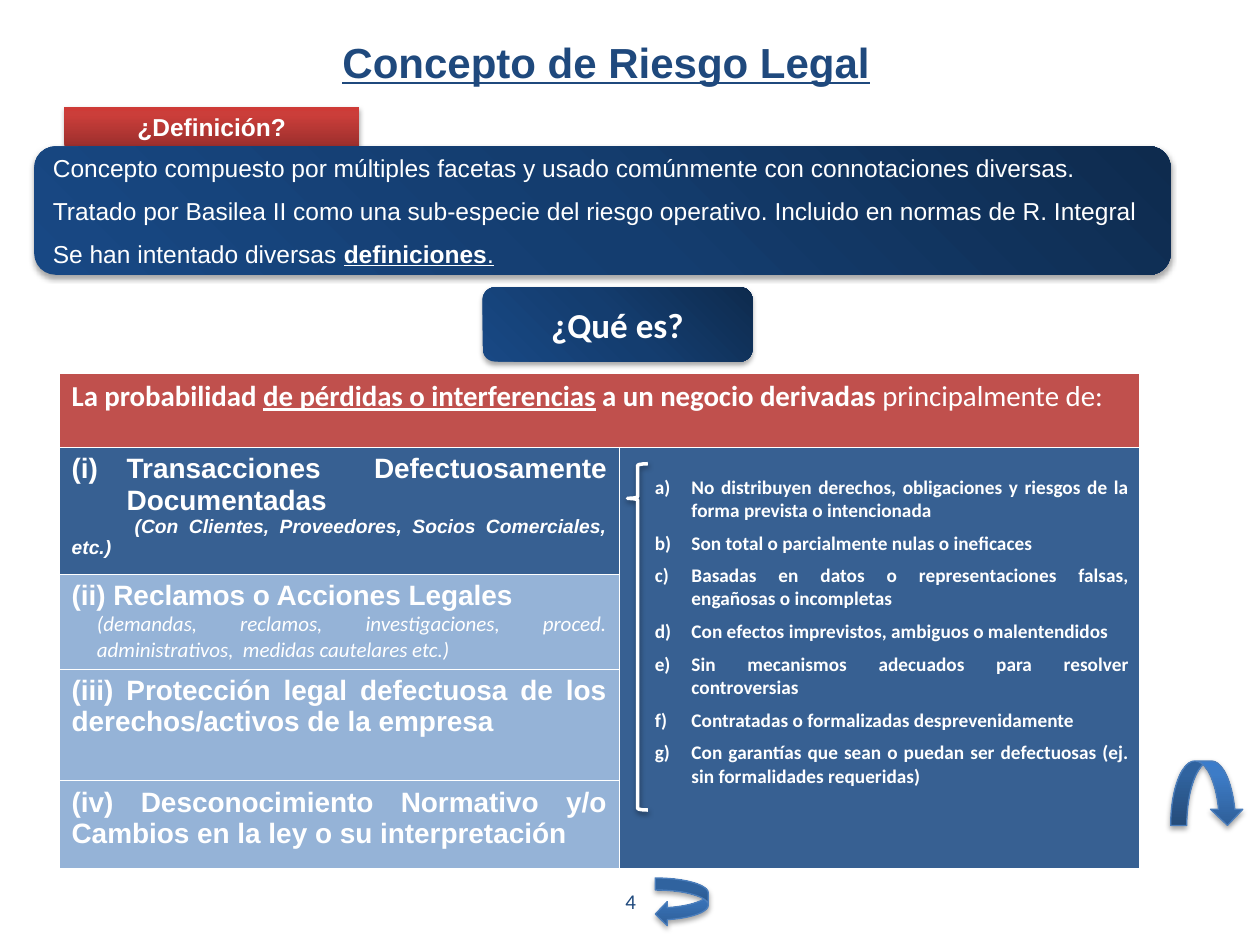
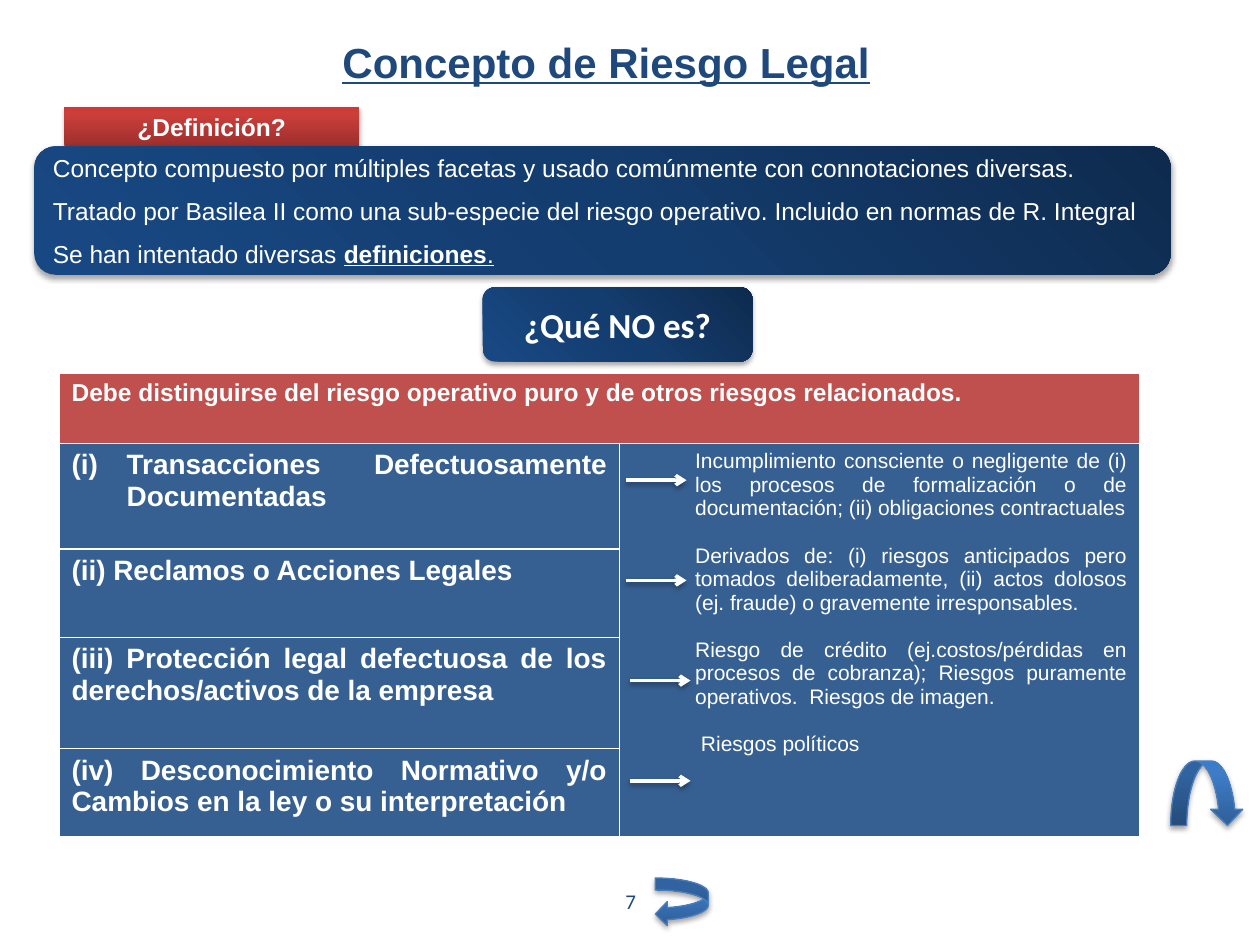
from lxml import etree
from pptx import Presentation
from pptx.dml.color import RGBColor
from pptx.enum import shapes, text
from pptx.oxml import parse_xml
from pptx.oxml.ns import nsdecls, qn
from pptx.util import Cm, Pt

WHITE, NAVY, RED = "FFFFFF", "1F497D", "C0504D"
DEEP, PALE = "376092", "95B3D7"
CRIMSON = [(0, "9C2F2D"), (80, "CB3E3A"), (100, "CE3B37")]
AZURE = [(0, "2F5F99"), (80, "3D7CC7"), (100, "3A7CCB")]
MARINE = [(0, "0E2B4E"), (50, "143D6F"), (100, "184884")]
UP = '<a:lin ang="16200000" scaled="0"/>'
CORNER = '<a:path path="circle"><a:fillToRect l="100000" b="100000"/></a:path>'
KIND = shapes.MSO_SHAPE
LEFT, MID, JUST = text.PP_ALIGN.LEFT, text.PP_ALIGN.CENTER, text.PP_ALIGN.JUSTIFY

TITLE = "Concepto de Riesgo Legal"
FACETS = [
    [("Concepto compuesto por múltiples facetas y usado comúnmente con "
      "connotaciones diversas.", "")],
    [("Tratado por Basilea II como una sub-especie del riesgo operativo. "
      "Incluido en normas de R. Integral", "")],
    [("Se han intentado diversas ", ""), ("definiciones", "bu"), (".", "u")],
]
FLAWS = [
    "No distribuyen derechos, obligaciones y riesgos de la forma prevista o intencionada",
    "Son total o parcialmente nulas o ineficaces",
    "Basadas en datos o representaciones falsas, engañosas o incompletas",
    "Con efectos imprevistos, ambiguos o malentendidos",
    "Sin mecanismos adecuados para resolver controversias",
    "Contratadas o formalizadas desprevenidamente",
    "Con garantías que sean o puedan ser defectuosas (ej. sin formalidades requeridas)",
]
CAUSES = [
    "Transacciones Defectuosamente Documentadas",
    "(ii) Reclamos o Acciones Legales",
    "(iii) Protección legal defectuosa de los derechos/activos de la empresa",
    "(iv) Desconocimiento Normativo y/o Cambios en la ley o su interpretación",
]
LIMITS = [
    "Incumplimiento consciente o negligente de (i) los procesos de formalización o "
    "de documentación; (ii) obligaciones contractuales",
    "Derivados de: (i) riesgos anticipados pero tomados deliberadamente, (ii) actos "
    "dolosos (ej. fraude) o gravemente irresponsables.",
    "Riesgo de crédito (ej.costos/pérdidas en procesos de cobranza); Riesgos "
    "puramente operativos.  Riesgos de imagen.",
    " Riesgos políticos",
]


def rgb(code):
    return RGBColor.from_string(code)


def write(frame, parts, size, font="Arial", color=WHITE, align=JUST, gap=0,
          left=0, first=0, mark=None):
    """Add a paragraph of (text, style) parts; style holds b, i and u."""
    para = frame.paragraphs[0]
    if para.runs:
        para = frame.add_paragraph()
    para.alignment = align
    para.space_before = Pt(gap)
    props = para._p.get_or_add_pPr()
    props.set("marL", str(Cm(left)))
    props.set("indent", str(Cm(first)))
    if mark:
        etree.SubElement(props, qn("a:buFont"), typeface="+mj-lt")
        etree.SubElement(props, qn("a:buAutoNum"), type=mark)
    for words, style in parts:
        run = para.add_run()
        run.text = words
        face = run.font
        face.name, face.size = font, Pt(size)
        face.bold, face.italic, face.underline = (key in style for key in "biu")
        face.color.rgb = rgb(color)


def shade(shape, alpha=35, dist=1.8):
    """Give a shape or connector its soft shadow, after fill and line are set."""
    shape._element.spPr.append(parse_xml(
        f'<a:effectLst {nsdecls("a")}><a:outerShdw blurRad="{Pt(3.1)}" '
        f'dist="{Pt(dist)}" dir="5400000" rotWithShape="0"><a:srgbClr val="000000">'
        f'<a:alpha val="{alpha * 1000}"/></a:srgbClr></a:outerShdw></a:effectLst>'))


def blend(shape, stops, way):
    """Fill a shape with a gradient of (percent, colour) stops."""
    shape.fill.gradient()
    old = shape._element.spPr.find(qn("a:gradFill"))
    marks = "".join(f'<a:gs pos="{at * 1000}"><a:srgbClr val="{code}"/></a:gs>'
                    for at, code in stops)
    new = parse_xml(f'<a:gradFill {nsdecls("a")} rotWithShape="1">'
                    f'<a:gsLst>{marks}</a:gsLst>{way}</a:gradFill>')
    old.getparent().replace(old, new)


def block(slide, kind, box, stops, way, edge=None):
    shape = slide.shapes.add_shape(kind, *map(Cm, box))
    blend(shape, stops, way)
    if edge:
        shape.line.color.rgb = rgb(edge)
        shape.line.width = Pt(0.75)
    else:
        shape.line.fill.background()
    shade(shape)
    frame = shape.text_frame
    frame.word_wrap = True
    frame.vertical_anchor = text.MSO_ANCHOR.MIDDLE
    return frame


def label(slide, box):
    frame = slide.shapes.add_textbox(*map(Cm, box)).text_frame
    frame.word_wrap = True
    return frame


def head(slide, box):
    title = slide.shapes.title
    title.left, title.top, title.width, title.height = map(Cm, box)
    frame = title.text_frame
    frame.vertical_anchor = text.MSO_ANCHOR.MIDDLE
    write(frame, [(TITLE, "bu")], 24, color=NAVY, align=MID)


def intro(slide, box):
    """Red tag on top of the panel of facets."""
    x, y, w, h = box
    tag = block(slide, KIND.RECTANGLE, (x + 0.61, y, 5.94, 0.79), CRIMSON, UP)
    write(tag, [("¿Definición?", "b")], 14, align=MID)
    panel = block(slide, KIND.ROUNDED_RECTANGLE, (x, y + 0.79, w, h - 0.79),
                  MARINE, CORNER)
    for parts in FACETS:
        write(panel, parts, 14, gap=7.6)


def ask(slide, box, words):
    frame = block(slide, KIND.ROUNDED_RECTANGLE, box, MARINE, CORNER)
    write(frame, [(words, "b")], 20, "Calibri", align=MID)


def foot(slide, box, page):
    """Page number with its two curved arrows."""
    x, y, w, h = box
    frame = label(slide, box)
    frame.vertical_anchor = text.MSO_ANCHOR.MIDDLE
    write(frame, [(page, "")], 12, "Calibri", NAVY, MID)
    for kind, spot in [
            (KIND.CURVED_LEFT_ARROW, (x + 4.52, y + 0.05, 1.07, 0.97)),
            (KIND.CURVED_DOWN_ARROW, (x + 14.91, y - 2.31, 1.47, 1.3))]:
        block(slide, kind, spot, AZURE, UP, "4B7EBC")


def paint(cell, color):
    """Set white borders first, then the fill, as the schema orders them."""
    props = cell._tc.get_or_add_tcPr()
    for side in ("lnL", "lnR", "lnT", "lnB"):
        props.append(parse_xml(
            f'<a:{side} {nsdecls("a")} w="{Pt(1)}"><a:solidFill>'
            f'<a:srgbClr val="{WHITE}"/></a:solidFill></a:{side}>'))
    cell.fill.solid()
    cell.fill.fore_color.rgb = rgb(color)


def grid(slide, box, rows, tints):
    """Table with a full-width header, causes at left and one tall cell at right."""
    x, y, w, _ = box
    table = slide.shapes.add_table(len(rows), 2, *map(Cm, box)).table
    table.first_row = table.horz_banding = False
    for col, wide in zip(table.columns, (11.3, w - 11.3)):
        col.width = Cm(wide)
    for num, (high, tint) in enumerate(zip(rows, tints)):
        table.rows[num].height = Cm(high)
        paint(table.cell(num, 0), tint)
        paint(table.cell(num, 1), DEEP if num else tint)
    table.cell(0, 0).merge(table.cell(0, 1))
    table.cell(1, 1).merge(table.cell(len(rows) - 1, 1))
    for num, cause in enumerate(CAUSES, 1):
        roman = {} if num > 1 else dict(left=1.11, first=-1.11, mark="romanLcParenBoth")
        write(table.cell(num, 0).text_frame, [(cause, "b")], 16, **roman)
    return table


def causes(slide, box):
    x, y, w, _ = box
    table = grid(slide, box, (1.5, 2.56, 1.91, 2.24, 1.78),
                 (RED, DEEP, PALE, PALE, PALE))
    write(table.cell(0, 0).text_frame,
          [("La probabilidad ", "b"), ("de pérdidas o interferencias", "bu"),
           (" a un negocio derivadas", "b"), (" principalmente de:", "")],
          16.5, "Calibri")
    write(table.cell(1, 0).text_frame,
          [("(Con Clientes, Proveedores, Socios Comerciales, etc.)", "bi")],
          11, first=1.27)
    write(table.cell(2, 0).text_frame,
          [("(demandas, reclamos, investigaciones, proced. administrativos,  "
            "medidas cautelares etc.)", "i")], 12, "Calibri", left=0.51)

    brace = slide.shapes.add_shape(
        KIND.LEFT_BRACE, *map(Cm, (x + 11.46, y + 1.83, 0.41, 6.98)))
    brace.adjustments[0], brace.adjustments[1] = 0.08, 0.1
    brace.fill.background()
    brace.line.color.rgb = rgb(WHITE)
    brace.line.width = Pt(2)
    shade(brace, 38, 1.6)
    frame = label(slide, (x + 11.76, y + 1.93, 10.06, 8.03))
    for flaw in FLAWS:
        write(frame, [(flaw, "b")], 11, "Calibri", gap=5.5,
              left=0.74, first=-0.74, mark="alphaLcParenR")


def limits(slide, box):
    x, y, w, _ = box
    table = grid(slide, box, (1.42, 2.13, 1.78, 2.24, 1.78), (RED,) + (DEEP,) * 4)
    write(table.cell(0, 0).text_frame,
          [("Debe distinguirse del riesgo operativo puro y de otros riesgos "
            "relacionados.", "b")], 14)
    for num, limit in enumerate(LIMITS):
        write(table.cell(1, 1).text_frame, [(limit, "")], 12, left=1.27,
              gap=13.5 if num else 0)
        start = x + (11.43 if num < 2 else 11.51)
        level = y + 2.16 + num * 2.02
        arrow = slide.shapes.add_connector(
            shapes.MSO_CONNECTOR.STRAIGHT,
            *map(Cm, (start, level, start + 1.22, level)))
        arrow.line.color.rgb = rgb(WHITE)
        arrow.line.width = Pt(2)
        etree.SubElement(arrow.line._get_or_add_ln(), qn("a:tailEnd"), type="arrow")
        shade(arrow, 38, 1.6)


def main():
    deck = Presentation()
    deck.slide_width, deck.slide_height = Cm(25.4), Cm(19.05)
    for query, page, body in [("¿Qué es?", "4", causes),
                              ("¿Qué NO es?", "7", limits)]:
        slide = deck.slides.add_slide(deck.slide_layouts[5])
        head(slide, (0.79, 0.33, 22.86, 1.83))
        intro(slide, (0.69, 2.16, 22.91, 3.38))
        ask(slide, (9.73, 5.79, 5.44, 1.5), query)
        body(slide, (1.19, 7.52, 21.79, 9.5))
        foot(slide, (8.69, 17.65, 8.05, 1.02), page)
    deck.save("out.pptx")


if __name__ == "__main__":
    main()
